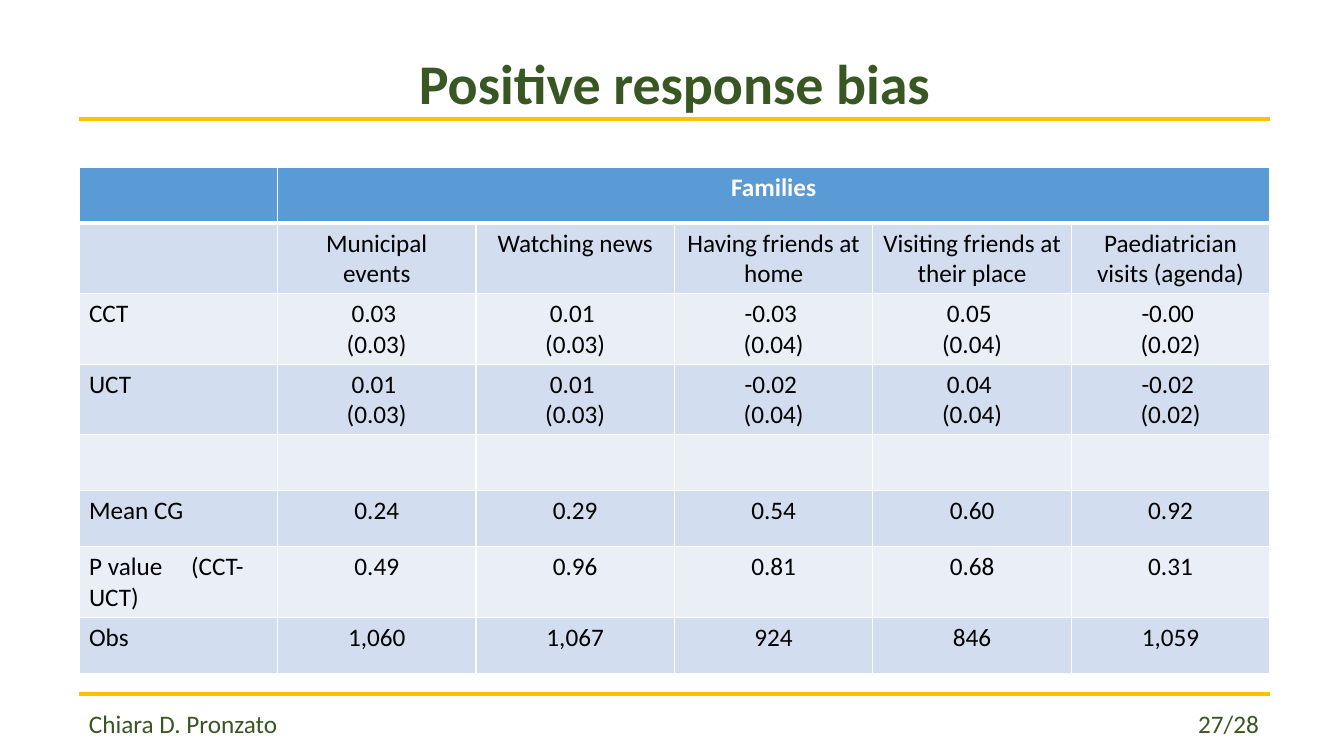
from lxml.etree import SubElement
from pptx import Presentation
from pptx.dml.color import RGBColor
from pptx.enum.shapes import MSO_CONNECTOR
from pptx.enum.text import MSO_ANCHOR, PP_ALIGN
from pptx.oxml.ns import qn
from pptx.util import Emu, Pt

COLORS = {
    "green": "385723", "gold": "FFC000", "white": "FFFFFF", "black": "000000",
    "header": "5B9BD5", "dark_band": "D2DEEF", "light_band": "EAEFF7",
}
LEFT, WIDTH = 79, 1191
ROWS = [
    ["", "Families", "", "", "", ""],
    ["", "Municipal\nevents", "Watching news", "Having friends at home",
     "Visiting friends at their place", "Paediatrician visits (agenda)"],
    ["CCT", "0.03 \n(0.03)", "0.01 \n(0.03)", "-0.03 \n(0.04)", "0.05 \n(0.04)", "-0.00 \n(0.02)"],
    ["UCT", "0.01 \n(0.03)", "0.01 \n(0.03)", "-0.02 \n(0.04)", "0.04 \n(0.04)", "-0.02 \n(0.02)"],
    [""] * 6,
    ["Mean CG", "0.24", "0.29", "0.54", "0.60", "0.92"],
    ["P value\t(CCT-UCT)", "0.49", "0.96", "0.81", "0.68", "0.31"],
    ["Obs", "1,060", "1,067", "924", "846", "1,059"],
]


def px(value):
    """Turn slide pixels into EMU."""
    return Emu(round(value * 12192000 / 1344))


def color(name):
    """Look up a named colour."""
    return RGBColor.from_string(COLORS[name])


class SlideBuilder:
    """Draws styled elements on the current slide."""

    def __init__(self, page, font="Calibri"):
        """Keep the slide and its typeface."""
        self.page = page
        self.font = font

    def fill_text(self, frame, text, size, ink, align=PP_ALIGN.LEFT, bold=False):
        """Fill a text frame, one paragraph per line."""
        frame.text = text
        for para in frame.paragraphs:
            para.alignment = align
            para.font.name = self.font
            para.font.size = Pt(size)
            para.font.bold = bold
            para.font.color.rgb = color(ink)

    def tab(self, para, position, align):
        """Add a tab stop to a paragraph."""
        properties = para._p.get_or_add_pPr()
        stops = properties.makeelement(qn("a:tabLst"), {})
        properties.insert_element_before(stops, "a:defRPr", "a:extLst")
        SubElement(stops, qn("a:tab"), pos=str(px(position)), algn=align)

    def text(self, top, height, text, size, **style):
        """Add a full-width text box and return its frame."""
        box = self.page.shapes.add_textbox(px(LEFT), px(top), px(WIDTH), px(height))
        frame = box.text_frame
        frame.word_wrap = True
        frame.vertical_anchor = MSO_ANCHOR.MIDDLE
        self.fill_text(frame, text, size, "green", **style)
        return frame

    def rule(self, top):
        """Add a full-width horizontal line."""
        line = self.page.shapes.add_connector(
            MSO_CONNECTOR.STRAIGHT, px(LEFT), px(top), px(LEFT + WIDTH), px(top))
        line.line.color.rgb = color("gold")
        line.line.width = Pt(2.25)
        SubElement(line._element.spPr, qn("a:effectLst"))

    def borders(self, cell, top, bottom):
        """Draw white cell borders with the given top and bottom widths."""
        properties = cell._tc.get_or_add_tcPr()
        for side, width in (("L", 1), ("R", 1), ("T", top), ("B", bottom)):
            edge = SubElement(properties, qn(f"a:ln{side}"), w=str(Pt(width)))
            fill = SubElement(edge, qn("a:solidFill"))
            SubElement(fill, qn("a:srgbClr"), val=COLORS["white"])

    def table(self, top, row_height, rows):
        """Add the banded table with a merged header."""
        columns = len(rows[0])
        table = self.page.shapes.add_table(
            len(rows), columns, px(LEFT), px(top), px(WIDTH), px(row_height * len(rows))).table
        for row in table.rows:
            row.height = px(row_height)
        table.cell(0, 1).merge(table.cell(0, columns - 1))
        for row, values in enumerate(rows):
            header = row == 0
            band = "header" if header else "dark_band" if row % 2 else "light_band"
            for column, value in enumerate(values):
                cell = table.cell(row, column)
                self.borders(cell, 3 if row == 1 else 1, 3 if header else 1)
                cell.fill.solid()
                cell.fill.fore_color.rgb = color(band)
                self.fill_text(cell.text_frame, value, 18, "white" if header else "black",
                               PP_ALIGN.CENTER if column else PP_ALIGN.LEFT, header)
                if "\t" in value:
                    self.tab(cell.text_frame.paragraphs[0], 102, "l")


def main():
    """Build and save the slide."""
    deck = Presentation()
    deck.slide_width, deck.slide_height = px(1344), px(756)
    builder = SlideBuilder(deck.slides.add_slide(deck.slide_layouts[6]))
    builder.text(40, 84, "Positive response bias", 40, align=PP_ALIGN.CENTER, bold=True)
    builder.rule(119)
    builder.rule(694)
    footer = builder.text(703, 41, "Chiara D. Pronzato\t27/28", 18)
    builder.tab(footer.paragraphs[0], 1170, "r")
    builder.table(167, 56, ROWS)
    deck.save("out.pptx")


if __name__ == "__main__":
    main()
